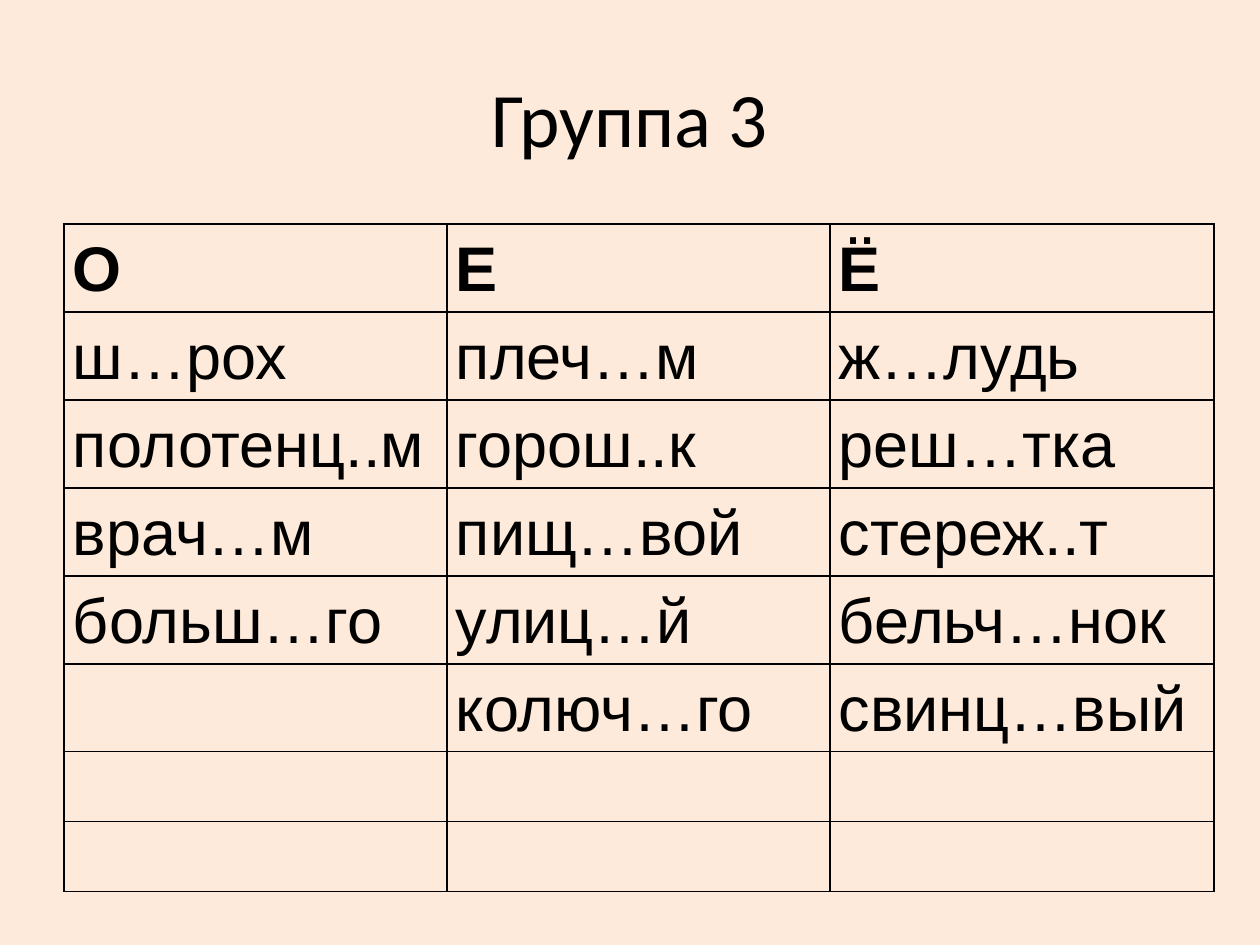
import pptx
import pptx.util
import pptx.dml.color
import pptx.enum.text
import pptx.oxml
import pptx.oxml.ns

SCALE = 914400 / 126
INK = "000000"
WORDS = [
    ["О", "Е", "Ё"],
    ["ш…рох", "плеч…м", "ж…лудь"],
    ["полотенц..м", "горош..к", "реш…тка"],
    ["врач…м", "пищ…вой", "стереж..т"],
    ["больш…го", "улиц…й", "бельч…нок"],
    ["", "колюч…го", "свинц…вый"],
    ["", "", ""],
    ["", "", ""],
]
COLS = [383, 383, 384]
ROWS = [88] * 6 + [70] * 2


def px(n):
    return pptx.util.Emu(round(n * SCALE))


def color(code):
    return pptx.dml.color.RGBColor.from_string(code)


def write(frame, text, font="Arial", size=36, bold=False, align="LEFT", space=1.0):
    para = frame.paragraphs[0]
    para.alignment = getattr(pptx.enum.text.PP_ALIGN, align)
    para.line_spacing = space
    run = para.add_run()
    run.text = text
    run.font.name = font
    run.font.size = pptx.util.Pt(size)
    run.font.bold = bold
    run.font.color.rgb = color(INK)


def title(slide, text):
    box = slide.shapes.add_textbox(px(63), px(38), px(1134), px(158))
    frame = box.text_frame
    frame.word_wrap = True
    frame.vertical_anchor = pptx.enum.text.MSO_ANCHOR.MIDDLE
    write(frame, text, font="Calibri", size=44, align="CENTER")


def border(cell):
    props = cell._tc.get_or_add_tcPr()
    space = pptx.oxml.ns.nsdecls("a")
    for spot, side in enumerate("LRTB"):
        line = pptx.oxml.parse_xml(
            f'<a:ln{side} {space} w="12700"><a:solidFill>'
            f'<a:srgbClr val="{INK}"/></a:solidFill></a:ln{side}>'
        )
        props.insert(spot, line)


def table(slide, words):
    frame = slide.shapes.add_table(
        len(ROWS), len(COLS), px(64), px(224), px(sum(COLS)), px(sum(ROWS))
    )
    grid = frame.table
    grid.first_row = False
    grid.horz_banding = False
    for col, width in zip(grid.columns, COLS):
        col.width = px(width)
    for row, height in zip(grid.rows, ROWS):
        row.height = px(height)
    for r, line in enumerate(words):
        for c, word in enumerate(line):
            cell = grid.cell(r, c)
            cell.fill.background()
            border(cell)
            if word:
                cell.margin_left = cell.margin_right = px(9)
                cell.margin_top = cell.margin_bottom = 0
                write(cell.text_frame, word, bold=r == 0, space=1.15)


def main():
    deck = pptx.Presentation()
    deck.slide_width = px(1260)
    deck.slide_height = px(945)
    slide = deck.slides.add_slide(deck.slide_layouts[6])
    fill = slide.background.fill
    fill.solid()
    fill.fore_color.rgb = color("FDEADA")
    title(slide, "Группа 3")
    table(slide, WORDS)
    deck.save("out.pptx")


if __name__ == "__main__":
    main()
